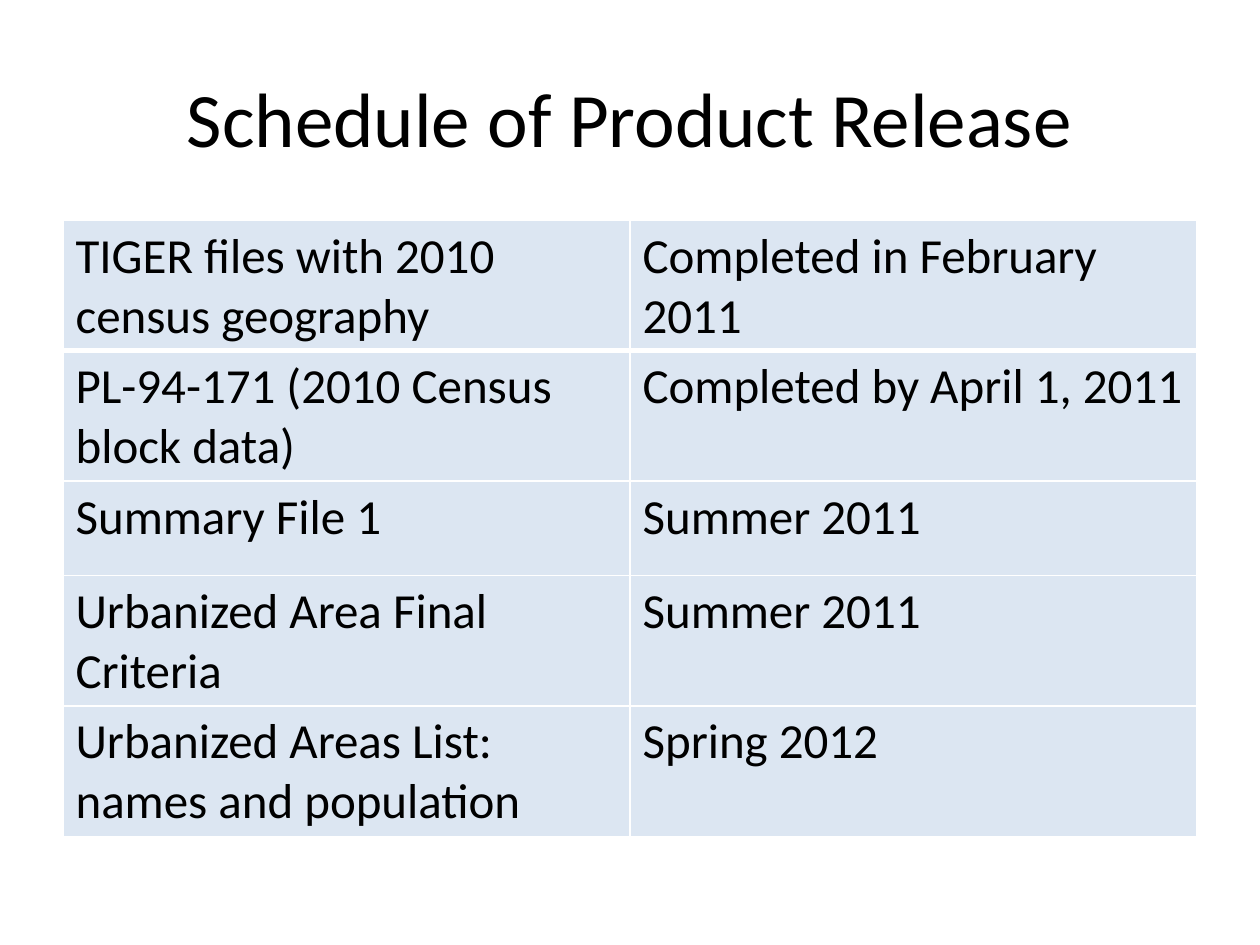
from dataclasses import dataclass

from lxml.etree import SubElement
from pptx import Presentation
from pptx.dml.color import RGBColor
from pptx.enum.text import MSO_ANCHOR as Anchor, PP_ALIGN as Align
from pptx.oxml.ns import qn
from pptx.util import Pt


@dataclass(frozen=True)
class Theme:
    font: str = "Calibri"
    ink: str = "000000"
    band: str = "DCE6F2"
    rule: str = "FFFFFF"
    title_size: int = 44
    body_size: int = 28


theme = Theme()


def write(frame, text, *, size, align=Align.LEFT, anchor=Anchor.TOP):
    frame.word_wrap = True
    frame.vertical_anchor = anchor
    paragraph = frame.paragraphs[0]
    paragraph.alignment = align
    run = paragraph.add_run()
    run.text = text
    run.font.name = theme.font
    run.font.size = Pt(size)
    run.font.color.rgb = RGBColor.from_string(theme.ink)


def set_borders(cell, **widths):
    properties = cell._tc.get_or_add_tcPr()
    for position, (side, width) in enumerate(widths.items()):
        line = properties.makeelement(qn(f"a:ln{side}"), {"w": str(Pt(width))})
        fill = SubElement(line, qn("a:solidFill"))
        SubElement(fill, qn("a:srgbClr"), val=theme.rule)
        properties.insert(position, line)


releases = [
    ("TIGER files with 2010 census geography", "Completed in February 2011"),
    ("PL-94-171 (2010 Census block data)", "Completed by April 1, 2011"),
    ("Summary File 1", "Summer 2011"),
    ("Urbanized Area Final Criteria", "Summer 2011"),
    ("Urbanized Areas List: names and population", "Spring 2012"),
]
left, width, row_height = 36, 648, 54

deck = Presentation()
deck.slide_width, deck.slide_height = Pt(720), Pt(540)
slide = deck.slides.add_slide(deck.slide_layouts[6])

heading = slide.shapes.add_textbox(Pt(left), Pt(21.6), Pt(width), Pt(90))
write(heading.text_frame, "Schedule of Product Release", size=theme.title_size,
      align=Align.CENTER, anchor=Anchor.MIDDLE)

schedule = slide.shapes.add_table(
    len(releases), 2, Pt(left), Pt(126), Pt(width), Pt(row_height * len(releases))
).table
schedule.horz_banding = False

for row, release in enumerate(releases):
    for column, text in enumerate(release):
        cell = schedule.cell(row, column)
        write(cell.text_frame, text, size=theme.body_size)
        cell.fill.solid()
        cell.fill.fore_color.rgb = RGBColor.from_string(theme.band)
        set_borders(cell, L=1, R=1, T=3 if row == 1 else 1, B=3 if row == 0 else 1)

deck.save("out.pptx")
